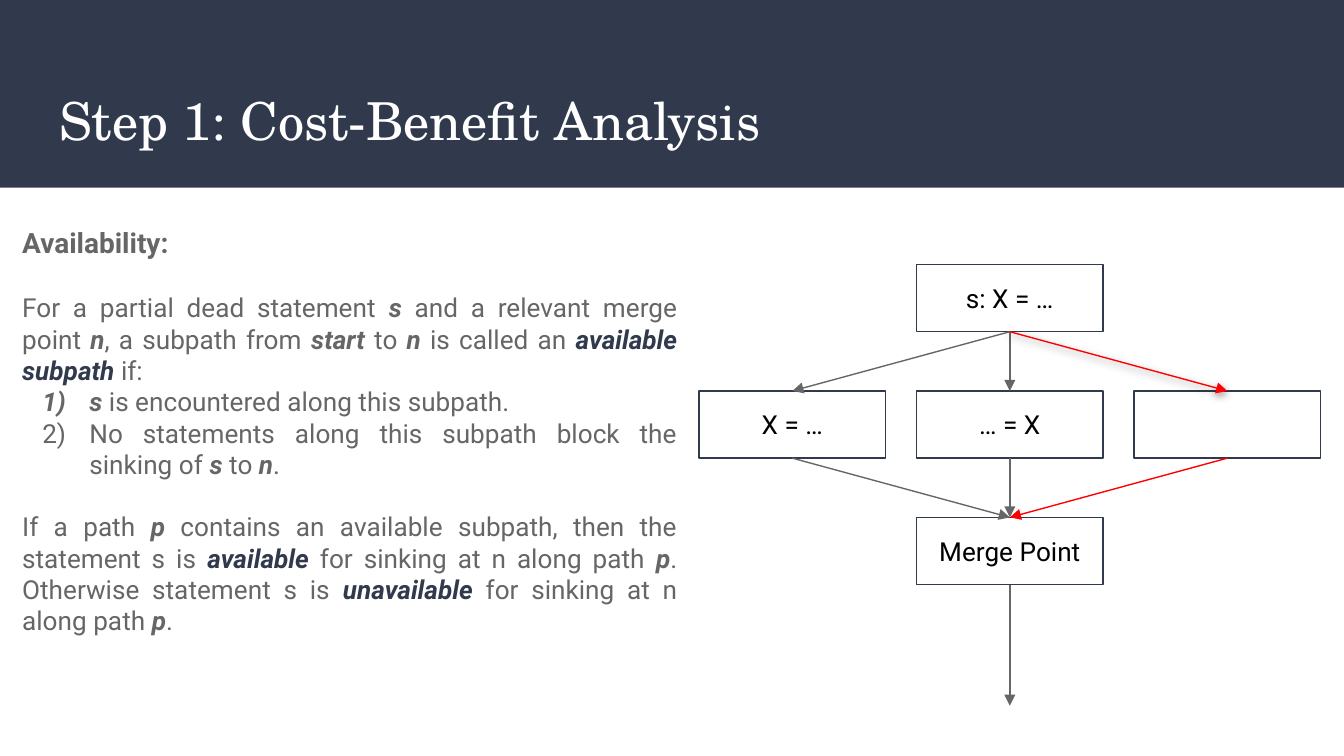
from lxml import etree
from pptx import Presentation
from pptx.dml.color import RGBColor
from pptx.enum import shapes, text
from pptx.oxml import parse_xml
from pptx.oxml.ns import nsdecls, qn
from pptx.util import Cm, Pt

NAVY = RGBColor(0x31, 0x39, 0x4D)
GREY = RGBColor(0x66, 0x66, 0x66)
RED = RGBColor(0xFF, 0x00, 0x00)
WHITE = RGBColor(0xFF, 0xFF, 0xFF)
BLACK = RGBColor(0x00, 0x00, 0x00)
SERIF, SANS = "TeX Gyre Schola", "Roboto"

TITLE = "Step 1: Cost-Benefit Analysis"

# Styles of the text pieces: plain, a *variable*, a _defined term_
PLAIN = {"name": SANS, "size": Pt(14)}
EMPHASIS = {"*": {"bold": True, "italic": True}, "_": {"bold": True, "italic": True}}

# (text, is a numbered item, space before in points)
BODY = [
    ("For a partial dead statement *s* and a relevant merge point *n*, a subpath from "
     "*start* to *n* is called an _available subpath_ if:", False, 17.5),
    ("*s* is encountered along this subpath.", True, 0),
    ("No statements along this subpath block the sinking of *s* to *n*.", True, 0),
    ("If a path *p* contains an available subpath, then the statement s is _available_ "
     "for sinking at n along path *p*. Otherwise statement s is _unavailable_ "
     "for sinking at n along path *p*.", False, 16.5),
]

# name: (label, column, row)
NODES = {
    "start": ("s: X = …", 1, 0),
    "use": ("… = X", 1, 1),
    "redefine": ("X = …", 0, 1),
    "empty": ("", 2, 1),
    "merge": ("Merge Point", 1, 2),
}
# (from, to, colour, has a shadow)
EDGES = [
    ("start", "redefine", GREY, False),
    ("start", "use", GREY, False),
    ("redefine", "merge", GREY, False),
    ("use", "merge", GREY, False),
    ("start", "empty", RED, True),
    ("empty", "merge", RED, False),
    ("merge", None, GREY, False),
]
NODE_WIDTH, NODE_HEIGHT = 3.53, 1.27
LEFT, COLUMN_STEP = 13.21, 4.11
TOP, ROW_STEP = 5.0, 2.39
EXIT_Y = 13.34
BOTTOM_SITE, TOP_SITE = 2, 0

SHADOW = ('<a:outerShdw %s blurRad="57150" dist="19050" dir="5400000" algn="bl" rotWithShape="0">'
          '<a:srgbClr val="000000"><a:alpha val="50000"/></a:srgbClr></a:outerShdw>'
          % nsdecls("a"))


def add_run(paragraph, words, color, **styles):
    run = paragraph.add_run()
    run.text = words
    run.font.color.rgb = color
    for name, value in styles.items():
        setattr(run.font, name, value)


def add_marked_runs(paragraph, marked):
    """Split the text at the * and _ marks and style what stands between them."""
    piece, mark = "", None
    for character in marked + "\0":
        if character not in EMPHASIS and character != "\0":
            piece += character
            continue
        if piece:
            color = NAVY if mark == "_" else GREY
            add_run(paragraph, piece, color, **PLAIN, **EMPHASIS.get(mark, {}))
        piece, mark = "", None if mark else character


def number_item(paragraph):
    properties = paragraph._p.get_or_add_pPr()
    properties.set("marL", str(Cm(1.27)))
    properties.set("indent", str(-Cm(0.89)))
    color = etree.SubElement(properties, qn("a:buClr"))
    etree.SubElement(color, qn("a:srgbClr"), val=str(GREY))
    etree.SubElement(properties, qn("a:buFont"), typeface=SANS)
    etree.SubElement(properties, qn("a:buAutoNum"), type="arabicParenR")


def set_frame(shape, anchor):
    frame = shape.text_frame
    settings = {"word_wrap": True, "vertical_anchor": anchor}
    for side in ("left", "right", "top", "bottom"):
        settings["margin_" + side] = Cm(0.25)
    for name, value in settings.items():
        setattr(frame, name, value)
    return frame


def add_box(slide, left, top, width, height, fill, line=None):
    shape = slide.shapes.add_shape(shapes.MSO_SHAPE.RECTANGLE,
                                   Cm(left), Cm(top), Cm(width), Cm(height))
    shape.shadow.inherit = False
    shape.fill.solid()
    shape.fill.fore_color.rgb = fill
    if line is None:
        shape.line.fill.background()
    else:
        shape.line.color.rgb = line
        shape.line.width = Pt(0.75)
    return shape


def add_node(slide, label, column, row):
    node = add_box(slide, LEFT + column * COLUMN_STEP, TOP + row * ROW_STEP,
                   NODE_WIDTH, NODE_HEIGHT, WHITE, NAVY)
    if label:
        paragraph = set_frame(node, text.MSO_ANCHOR.MIDDLE).paragraphs[0]
        paragraph.alignment = text.PP_ALIGN.CENTER
        add_run(paragraph, label, BLACK, **PLAIN)
    return node


def add_arrow(slide, source, target, color, shadowed):
    """Join the bottom of source to the top of target, or to the exit below."""
    x = source.left + source.width // 2
    arrow = slide.shapes.add_connector(shapes.MSO_CONNECTOR.STRAIGHT,
                                       x, source.top + source.height, x, Cm(EXIT_Y))
    arrow.begin_connect(source, BOTTOM_SITE)
    if target is not None:
        arrow.end_connect(target, TOP_SITE)
    arrow.line.color.rgb = color
    arrow.line.width = Pt(0.75)
    etree.SubElement(arrow.line._get_or_add_ln(), qn("a:tailEnd"), type="triangle")
    effects = etree.SubElement(arrow._element.spPr, qn("a:effectLst"))
    if shadowed:
        effects.append(parse_xml(SHADOW))


def add_text(slide, left, top, width, height, anchor):
    box = slide.shapes.add_textbox(Cm(left), Cm(top), Cm(width), Cm(height))
    return set_frame(box, anchor)


def main():
    presentation = Presentation()
    presentation.slide_width, presentation.slide_height = Cm(25.4), Cm(14.29)
    slide = presentation.slides.add_slide(presentation.slide_layouts[6])

    add_box(slide, 0, 0, 25.4, 3.55, NAVY)
    title = add_text(slide, 0.87, 1.4, 23.67, 1.73, text.MSO_ANCHOR.MIDDLE)
    add_run(title.paragraphs[0], TITLE, WHITE, name=SERIF, size=Pt(28))

    nodes = {name: add_node(slide, *node) for name, node in NODES.items()}
    for source, target, color, shadowed in EDGES:
        add_arrow(slide, nodes[source], nodes.get(target), color, shadowed)

    body = add_text(slide, 0.17, 4.01, 12.88, 9.35, text.MSO_ANCHOR.TOP)
    heading = body.paragraphs[0]
    heading.alignment = text.PP_ALIGN.JUSTIFY
    add_run(heading, "Availability:", GREY, name=SANS, size=Pt(15), bold=True)
    for marked, numbered, space in BODY:
        paragraph = body.add_paragraph()
        paragraph.alignment = text.PP_ALIGN.JUSTIFY
        paragraph.space_before = Pt(space)
        if numbered:
            number_item(paragraph)
        add_marked_runs(paragraph, marked)

    presentation.save("out.pptx")


if __name__ == "__main__":
    main()
